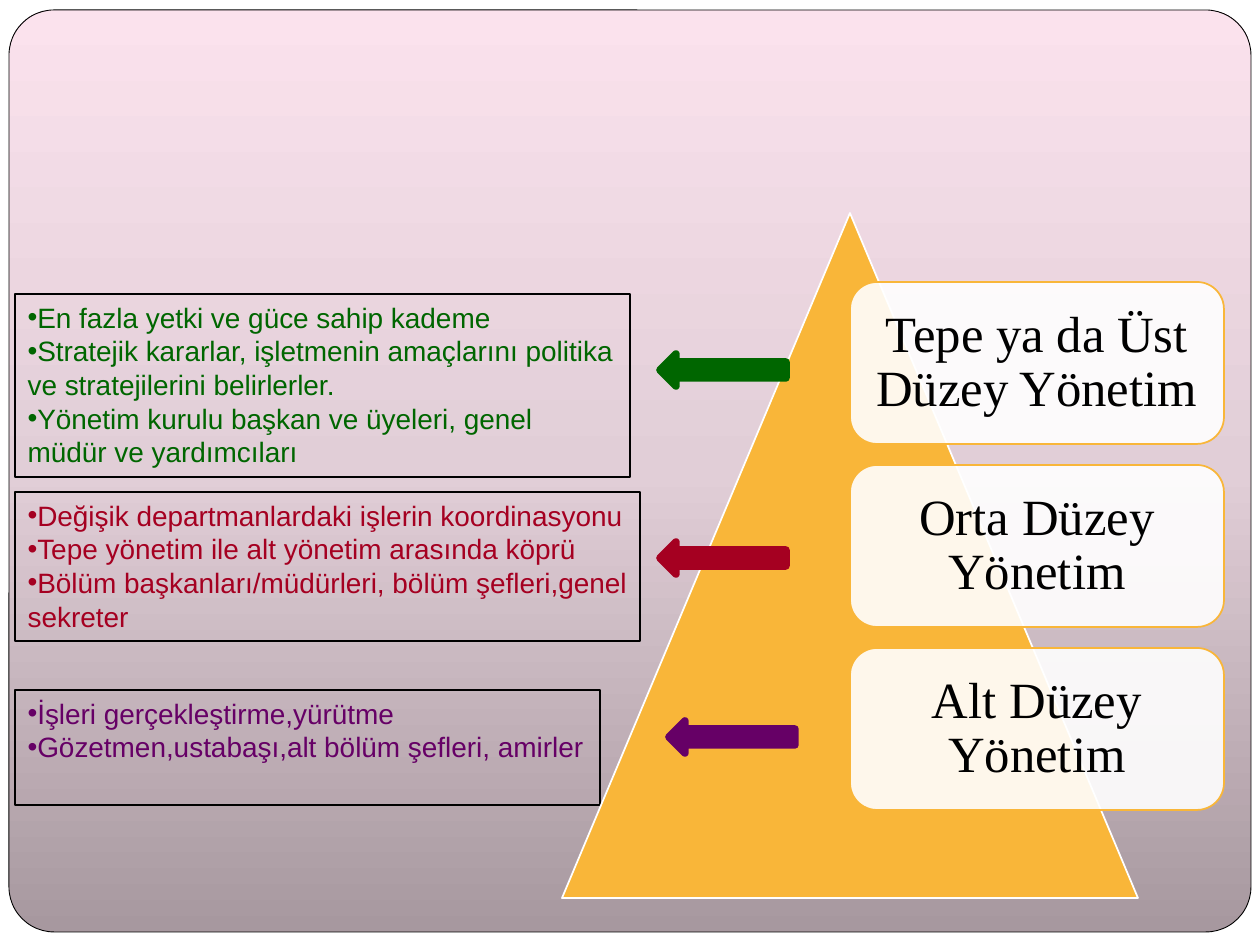
from dataclasses import dataclass

from pptx import Presentation
from pptx.dml.color import RGBColor
from pptx.enum.shapes import MSO_SHAPE
from pptx.enum.text import MSO_ANCHOR, MSO_AUTO_SIZE, PP_ALIGN
from pptx.oxml import parse_xml
from pptx.oxml.ns import nsdecls, qn
from pptx.util import Emu, Pt

PX_PER_INCH = 126
ORANGE, WHITE, BLACK = "F9B639", "FFFFFF", "000000"
BACKDROP = ((0, "A7989F"), (50, "E1CED7"), (100, "FBE2ED"))
CARD_TOP, CARD_STEP = 282, 183


def px(length: int) -> Emu:
    return Emu(round(length * 914400 / PX_PER_INCH))


def rgb(value: str) -> RGBColor:
    return RGBColor.from_string(value)


@dataclass
class Box:
    left: int
    top: int
    width: int
    height: int

    def emu(self) -> tuple:
        return tuple(px(v) for v in (self.left, self.top, self.width, self.height))


@dataclass
class Level:
    name: str
    duties: list
    color: str
    holder: int  # placeholder index in the layout
    duties_box: Box
    arrow_box: Box


LEVELS = [
    Level("Tepe ya da Üst Düzey Yönetim",
          ["En fazla yetki ve güce sahip kademe",
           "Stratejik kararlar, işletmenin amaçlarını politika ve stratejilerini belirlerler.",
           "Yönetim kurulu başkan ve üyeleri, genel müdür ve yardımcıları"],
          "006600", 1, Box(15, 294, 615, 183), Box(660, 354, 126, 32)),
    Level("Orta Düzey Yönetim",
          ["Değişik departmanlardaki işlerin koordinasyonu",
           "Tepe yönetim ile alt yönetim arasında köprü",
           "Bölüm başkanları/müdürleri, bölüm şefleri,genel sekreter"],
          "A50021", 2, Box(15, 492, 625, 149), Box(660, 542, 126, 32)),
    Level("Alt Düzey Yönetim",
          ["İşleri gerçekleştirme,yürütme",
           "Gözetmen,ustabaşı,alt bölüm şefleri, amirler"],
          "660066", 4, Box(15, 690, 585, 115), Box(669, 721, 126, 32)),
]


def add_shape(slide, kind: MSO_SHAPE, box: Box, fill: str, line: str, weight: float):
    shape = slide.shapes.add_shape(kind, *box.emu())
    shape.shadow.inherit = False
    shape.fill.solid()
    shape.fill.fore_color.rgb = rgb(fill)
    shape.line.color.rgb = rgb(line)
    shape.line.width = Pt(weight)
    return shape


def write(frame, lines: list, *, font: str, size: int, color: str,
          align=PP_ALIGN.LEFT, anchor=MSO_ANCHOR.TOP, spacing: float = 1.0,
          bullet: str = "") -> None:
    frame.word_wrap = True
    frame.auto_size = MSO_AUTO_SIZE.NONE
    frame.vertical_anchor = anchor
    for number, line in enumerate(lines):
        paragraph = frame.add_paragraph() if number else frame.paragraphs[0]
        paragraph.alignment = align
        paragraph.line_spacing = spacing
        paragraph.space_before = paragraph.space_after = Pt(0)
        if bullet:
            properties = paragraph._p.get_or_add_pPr()
            properties.set("marL", "0")
            properties.set("indent", "0")
            properties.append(parse_xml(f'<a:buChar {nsdecls("a")} char="{bullet}"/>'))
        run = paragraph.add_run()
        run.text = line
        run.font.name = font
        run.font.size = Pt(size)
        run.font.bold = False
        run.font.color.rgb = rgb(color)


def add_frame(slide) -> None:
    frame = add_shape(slide, MSO_SHAPE.ROUNDED_RECTANGLE, Box(9, 10, 1242, 922),
                      WHITE, BLACK, 0.5)
    frame.adjustments[0] = 0.049
    stops = "".join(f'<a:gs pos="{pos * 1000}"><a:srgbClr val="{color}"/></a:gs>'
                    for pos, color in BACKDROP)
    gradient = parse_xml(f'<a:gradFill {nsdecls("a")} rotWithShape="1"><a:gsLst>{stops}</a:gsLst>'
                         '<a:lin ang="16200000" scaled="0"/></a:gradFill>')
    properties = frame._element.spPr
    properties.replace(properties.find(qn("a:solidFill")), gradient)
    # Behind the placeholders
    tree = slide.shapes._spTree
    tree.remove(frame._element)
    tree.insert(2, frame._element)


def add_card(slide, name: str, box: Box) -> None:
    card = add_shape(slide, MSO_SHAPE.ROUNDED_RECTANGLE, box, WHITE, ORANGE, 1)
    white = card._element.spPr.find(qn("a:solidFill"))[0]
    white.append(parse_xml(f'<a:alpha {nsdecls("a")} val="90000"/>'))
    text = card.text_frame
    text.margin_left = text.margin_right = text.margin_top = text.margin_bottom = px(15)
    write(text, [name], font="Times New Roman", size=29, color=BLACK,
          align=PP_ALIGN.CENTER, anchor=MSO_ANCHOR.MIDDLE, spacing=0.9)


def add_duties(slide, level: Level) -> None:
    duties = slide.placeholders[level.holder]
    duties.left, duties.top, duties.width, duties.height = level.duties_box.emu()
    duties.line.color.rgb = rgb(BLACK)
    duties.line.width = Pt(0.75)
    write(duties.text_frame, level.duties, font="Arial", size=16,
          color=level.color, bullet="•")


def main() -> None:
    deck = Presentation()
    deck.slide_width, deck.slide_height = px(1260), px(945)
    slide = deck.slides.add_slide(deck.slide_layouts[4])
    slide.background.fill.solid()
    slide.background.fill.fore_color.rgb = rgb(WHITE)

    # Backdrop and pyramid
    add_frame(slide)
    add_shape(slide, MSO_SHAPE.ISOSCELES_TRIANGLE, Box(562, 213, 576, 685),
              ORANGE, WHITE, 1)

    # One card, arrow and list of duties per level
    for row, level in enumerate(LEVELS):
        add_card(slide, level.name, Box(850, CARD_TOP + row * CARD_STEP, 374, 162))
        add_shape(slide, MSO_SHAPE.LEFT_ARROW, level.arrow_box,
                  level.color, level.color, 4.33)
        add_duties(slide, level)

    # Unused placeholders
    for holder in list(slide.placeholders):
        if not holder.text_frame.text:
            holder._element.getparent().remove(holder._element)

    deck.save("out.pptx")


if __name__ == "__main__":
    main()
